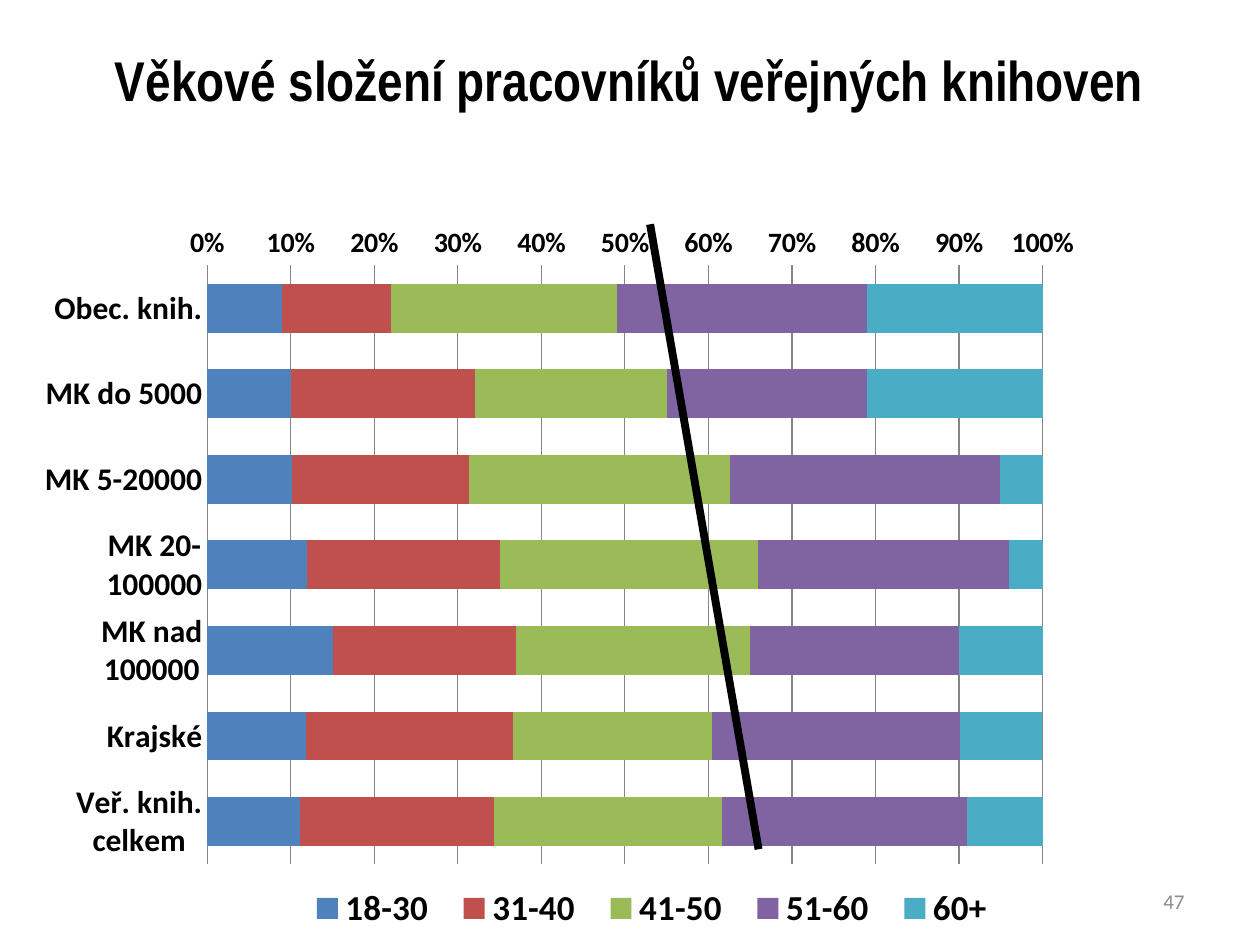
import dataclasses

import lxml.etree
import pptx
import pptx.chart.data
import pptx.dml.color
import pptx.enum.chart
import pptx.enum.shapes
import pptx.enum.text
import pptx.oxml
import pptx.oxml.ns
import pptx.util

Pt = pptx.util.Pt
qn = pptx.oxml.ns.qn


@dataclasses.dataclass(frozen=True)
class Theme:
    """Colours, fonts and type sizes of the slide."""
    ink: str = "000000"
    muted: str = "8C8C8C"
    grid: str = "868686"
    series: tuple = ("4F81BD", "C0504D", "9BBB59", "8064A2", "4BACC6")
    title_font: str = "Arial Narrow"
    body_font: str = "Calibri"
    title_size: int = 32
    legend_size: int = 20
    category_size: int = 18
    value_size: int = 16
    number_size: int = 12


THEME = Theme()
LIBRARIES = ("Obec. knih.", "MK do 5000", "MK 5-20000", "MK 20-100000",
             "MK nad 100000", "Krajské", "Veř. knih. celkem")
AGE_SHARES = {
    "18-30": (9, 10, 10, 12, 15, 12, 11),
    "31-40": (13, 22, 21, 23, 22, 25, 23),
    "41-50": (27, 23, 31, 31, 28, 24, 27),
    "51-60": (30, 24, 32, 30, 25, 30, 29),
    "60+": (21, 21, 5, 4, 10, 10, 9),
}


def rgb(value):
    """Return the colour for a hexadecimal string."""
    return pptx.dml.color.RGBColor.from_string(value)


def style_font(font, name, size, color, bold):
    """Set the face, size, colour and weight of a font."""
    font.name = name
    font.size = Pt(size)
    font.color.rgb = rgb(color)
    font.bold = bold


def add_text(slide, box, text, alignment, name, size, color, bold=False):
    """Add one vertically centred line of text."""
    shape = slide.shapes.add_textbox(*map(Pt, box))
    frame = shape.text_frame
    frame.word_wrap = True
    frame.vertical_anchor = pptx.enum.text.MSO_ANCHOR.MIDDLE
    paragraph = frame.paragraphs[0]
    paragraph.alignment = alignment
    run = paragraph.add_run()
    run.text = text
    style_font(run.font, name, size, color, bold)


def set_layout(element, position, inner=False):
    """Place a chart part by fractions of the chart area."""
    for old in element.findall(qn("c:layout")):
        element.remove(old)
    layout = lxml.etree.Element(qn("c:layout"))
    manual = lxml.etree.SubElement(layout, qn("c:manualLayout"))
    entries = [("layoutTarget", "inner")] if inner else []
    entries += [("xMode", "edge"), ("yMode", "edge"), *zip("xywh", position)]
    for tag, value in entries:
        lxml.etree.SubElement(manual, qn(f"c:{tag}")).set("val", str(value))
    element.insert(0 if inner else 1, layout)


def style_axis(axis, size):
    """Give an axis bold labels without tick marks."""
    style_font(axis.tick_labels.font, THEME.body_font, size, THEME.ink, True)
    axis.major_tick_mark = pptx.enum.chart.XL_TICK_MARK.NONE
    axis.minor_tick_mark = pptx.enum.chart.XL_TICK_MARK.NONE


def add_age_chart(slide, box):
    """Add the stacked bars of staff age by library type."""
    data = pptx.chart.data.CategoryChartData()
    data.categories = LIBRARIES
    for age, shares in AGE_SHARES.items():
        data.add_series(age, shares)
    chart = slide.shapes.add_chart(
        pptx.enum.chart.XL_CHART_TYPE.BAR_STACKED_100, *map(Pt, box), data).chart
    chart.has_title = False
    style_font(chart.font, THEME.body_font, 10, THEME.ink, False)
    plot = chart.plots[0]
    plot.gap_width = 75
    plot.overlap = 100
    plot.vary_by_categories = False
    for series, color in zip(plot.series, THEME.series):
        series.format.fill.solid()
        series.format.fill.fore_color.rgb = rgb(color)
    style_axis(chart.category_axis, THEME.category_size)
    chart.category_axis.reverse_order = True
    chart.category_axis.format.line.color.rgb = rgb(THEME.grid)
    values = chart.value_axis
    style_axis(values, THEME.value_size)
    values.minimum_scale, values.maximum_scale, values.major_unit = 0, 1, 0.1
    values.tick_labels.number_format = "0%"
    values.tick_labels.number_format_is_linked = False
    values.format.line.fill.background()
    values.has_major_gridlines = True
    values.major_gridlines.format.line.color.rgb = rgb(THEME.grid)
    chart.has_legend = True
    legend = chart.legend
    legend.position = pptx.enum.chart.XL_LEGEND_POSITION.BOTTOM
    legend.include_in_layout = False
    style_font(legend.font, THEME.body_font, THEME.legend_size, THEME.ink, True)
    plot_area = chart.element.find(".//" + qn("c:plotArea"))
    set_layout(plot_area, (0.17, 0.07, 0.78, 0.82), inner=True)
    set_layout(chart.element.find(".//" + qn("c:legend")), (0.25, 0.91, 0.67, 0.08))


def add_line(slide, ends, width):
    """Add a straight line without a shadow."""
    line = slide.shapes.add_connector(
        pptx.enum.shapes.MSO_CONNECTOR.STRAIGHT, *map(Pt, ends))
    line.line.color.rgb = rgb(THEME.ink)
    line.line.width = Pt(width)
    properties = line.element.find(qn("p:spPr"))
    lxml.etree.SubElement(properties, qn("a:effectLst"))


def main():
    """Build and save the slide."""
    presentation = pptx.Presentation()
    presentation.slide_width, presentation.slide_height = Pt(720), Pt(540)
    slide = presentation.slides.add_slide(presentation.slide_layouts[6])
    alignments = pptx.enum.text.PP_ALIGN
    add_age_chart(slide, (14.4, 122.4, 612, 417.6))
    add_text(slide, (0, 0, 720, 90), "Věkové složení pracovníků veřejných knihoven",
             alignments.CENTER, THEME.title_font, THEME.title_size, THEME.ink, True)
    add_line(slide, (371.5, 128.2, 433.5, 485.3), 4.5)
    add_text(slide, (516, 500.5, 168, 28.8), "47", alignments.RIGHT,
             THEME.body_font, THEME.number_size, THEME.muted)
    presentation.save("out.pptx")


if __name__ == "__main__":
    main()
